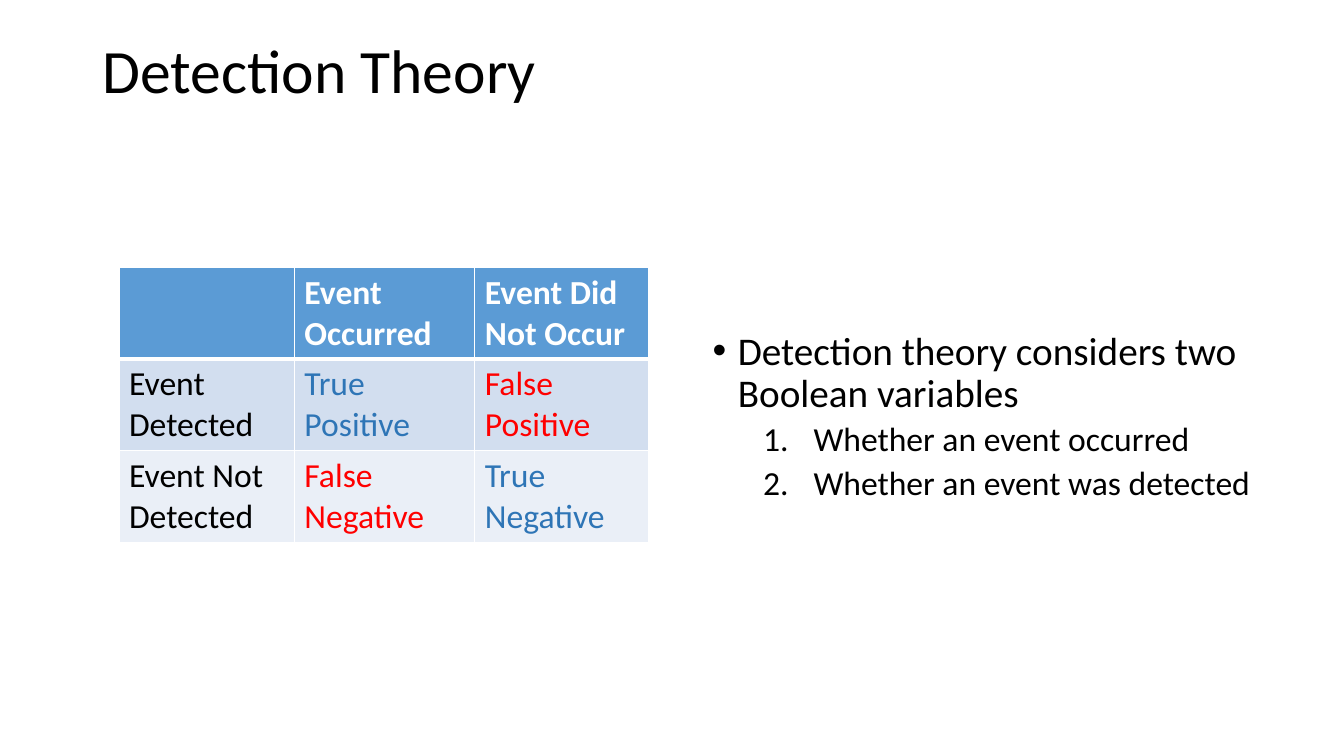
"""Build the Detection Theory slide: a confusion table beside a short list."""
from dataclasses import dataclass

from lxml import etree
from pptx import Presentation
from pptx.dml.color import RGBColor
from pptx.enum import text
from pptx.oxml import ns
from pptx.util import Inches, Pt


@dataclass(frozen=True)
class Theme:
    font: str = "Calibri"
    title_size: int = 44
    lead_size: int = 28
    body_size: int = 24
    black: str = "000000"
    white: str = "FFFFFF"
    header: str = "5B9BD5"
    band_dark: str = "D2DEEF"
    band_light: str = "EAEFF7"
    right: str = "2E75B6"
    wrong: str = "FF0000"


theme = Theme()


def style(paragraph, size, color, bold=False):
    """Set the font of a whole paragraph."""
    font = paragraph.font
    font.name, font.size, font.bold = theme.font, Pt(size), bold
    font.color.rgb = RGBColor.from_string(color)


def add_text_box(left, top, width, height):
    """Add a wrapping, vertically centred text box and return its text frame."""
    frame = slide.shapes.add_textbox(
        Inches(left), Inches(top), Inches(width), Inches(height)).text_frame
    frame.word_wrap = True
    frame.vertical_anchor = text.MSO_ANCHOR.MIDDLE
    return frame


presentation = Presentation()
presentation.slide_width, presentation.slide_height = Inches(13.33), Inches(7.5)
slide = presentation.slides.add_slide(presentation.slide_layouts[6])

title = add_text_box(0.92, 0, 11.5, 1.45).paragraphs[0]
title.text = "Detection Theory"
title.line_spacing = 0.9
style(title, theme.title_size, theme.black)

rows = [
    (theme.header, [("", theme.white), ("Event Occurred", theme.white),
                    ("Event Did Not Occur", theme.white)]),
    (theme.band_dark, [("Event Detected", theme.black), ("True Positive", theme.right),
                       ("False Positive", theme.wrong)]),
    (theme.band_light, [("Event Not Detected", theme.black), ("False Negative", theme.wrong),
                        ("True Negative", theme.right)]),
]
table = slide.shapes.add_table(
    3, 3, Inches(1.18), Inches(2.65), Inches(5.25), Inches(2.73)).table
for column, width in zip(table.columns, (1.74, 1.79, 1.72)):
    column.width = Inches(width)

for row_index, (fill, entries) in enumerate(rows):
    for column_index, (wording, color) in enumerate(entries):
        cell = table.cell(row_index, column_index)
        paragraph = cell.text_frame.paragraphs[0]
        paragraph.text = wording
        style(paragraph, theme.body_size, color, bold=row_index == 0)
        properties = cell._tc.get_or_add_tcPr()
        for side in "LRTB":
            thick = (row_index, side) in ((0, "B"), (1, "T"))
            line = etree.SubElement(
                properties, ns.qn(f"a:ln{side}"), w=str(Pt(3 if thick else 1)))
            solid = etree.SubElement(line, ns.qn("a:solidFill"))
            etree.SubElement(solid, ns.qn("a:srgbClr"), val=theme.white)
        cell.fill.solid()
        cell.fill.fore_color.rgb = RGBColor.from_string(fill)

items = [
    ("Detection theory considers two Boolean variables", 0, theme.lead_size),
    ("Whether an event occurred", 1, theme.body_size),
    ("Whether an event was detected", 1, theme.body_size),
]
frame = add_text_box(6.97, 2.63, 5.62, 3.01)
for index, (wording, level, size) in enumerate(items):
    paragraph = frame.add_paragraph() if index else frame.paragraphs[0]
    paragraph.text = wording
    paragraph.level = level
    paragraph.line_spacing = 0.9
    paragraph.space_before = Pt(5 if level else 10)
    style(paragraph, size, theme.black)
    properties = paragraph._p.get_or_add_pPr()
    properties.set("marL", str(Inches(1 if level else 0.25)))
    properties.set("indent", str(Inches(-0.5 if level else -0.25)))
    if level:
        bullet = etree.Element(ns.qn("a:buAutoNum"), type="arabicPeriod")
    else:
        bullet = etree.Element(ns.qn("a:buChar"), char="•")
    bullet_font = etree.Element(ns.qn("a:buFont"), typeface=theme.font if level else "Arial")
    defaults = properties.find(ns.qn("a:defRPr"))
    defaults.addprevious(bullet_font)
    defaults.addprevious(bullet)

presentation.save("out.pptx")
